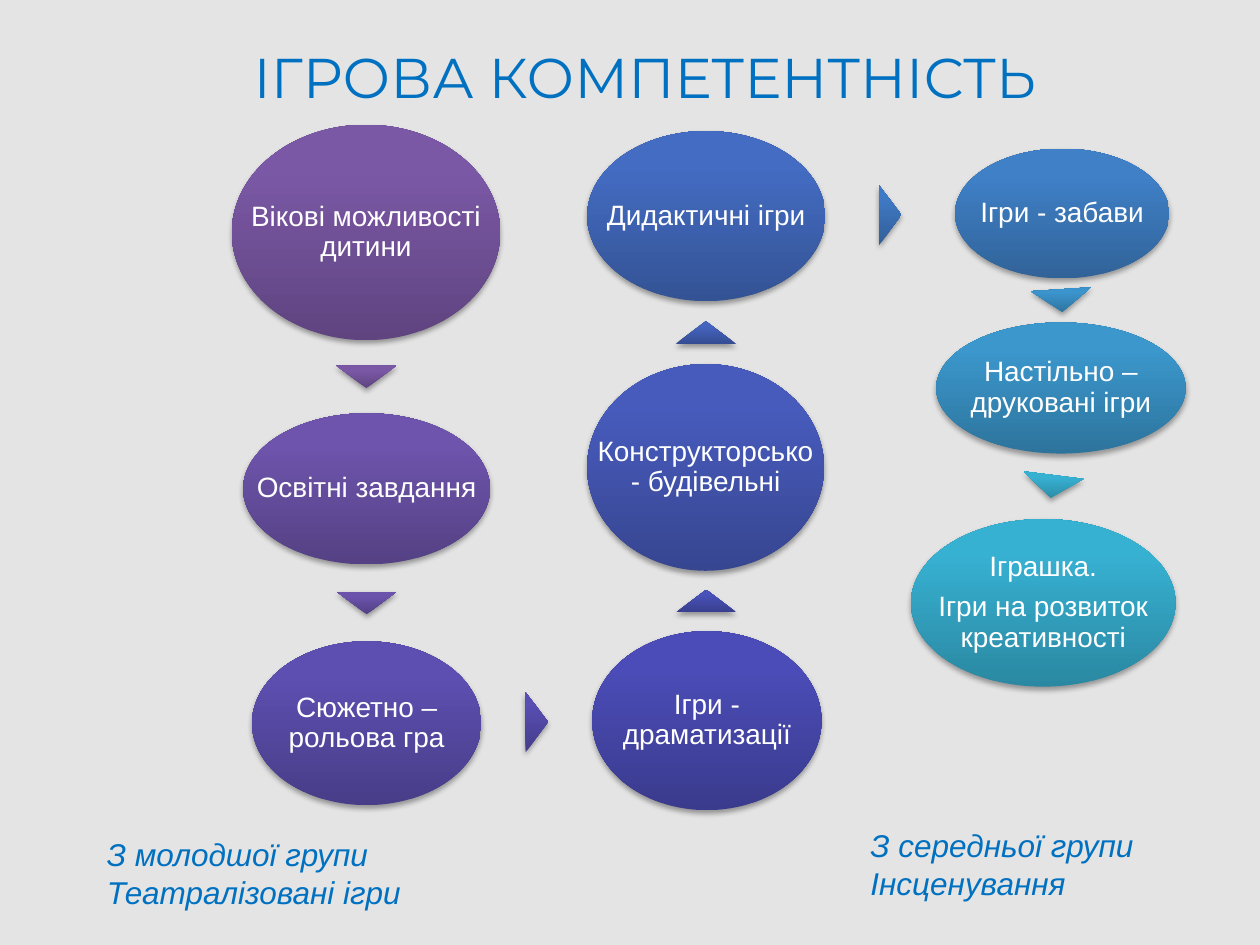
from dataclasses import dataclass
from typing import Any

from lxml import etree
from pptx import Presentation
from pptx.dml.color import RGBColor
from pptx.enum.shapes import MSO_SHAPE
from pptx.enum.text import MSO_ANCHOR, PP_ALIGN
from pptx.oxml.ns import qn
from pptx.util import Inches, Pt

ELLIPSE = MSO_SHAPE.OVAL
TRIANGLE = MSO_SHAPE.ISOSCELES_TRIANGLE
LEFT, CENTER = PP_ALIGN.LEFT, PP_ALIGN.CENTER
TOP, MIDDLE = MSO_ANCHOR.TOP, MSO_ANCHOR.MIDDLE

CELL = 0.1  # inches; the page is 100 columns by 75 rows
ARROW_WIDTH, ARROW_HEIGHT = 4.8, 1.8

# Text, ellipse (left, top, width, height) in cells, ellipse colour
STEPS = [
    ("Вікові можливості дитини", (18.4, 9.9, 21.3, 17.1), "7B58A6"),
    ("Освітні завдання", (19.3, 32.8, 19.6, 12), "6E54AC"),
    ("Сюжетно – рольова гра", (20, 50.9, 18.2, 13), "5D4FB1"),
    ("Ігри - драматизації", (47, 50.1, 18.2, 14.2), "4B4CB7"),
    ("Конструкторсько - будівельні", (46.6, 28.9, 18.8, 16.4), "475BBC"),
    ("Дидактичні ігри", (46.6, 10.4, 18.9, 13.5), "436CC2"),
    ("Ігри - забави", (75.8, 11.8, 17, 10.3), "3F80C7"),
    ("Настільно – друковані ігри", (74.3, 25.6, 19.8, 10.4), "3B97CC"),
    ("Іграшка.\nІгри на розвиток креативності", (72.3, 41.2, 21, 13.3), "37B1D2"),
]
# Turn in degrees and colour of the arrow after each step but the last
ARROWS = [
    (180, "7B58A6"), (180, "6B53AC"), (89.6, "584EB3"), (0, "4952B9"),
    (0, "4564BF"), (89.5, "407AC6"), (176.3, "3B94CC"), (187.2, "37B1D2"),
]


def color(hex_text):
    return RGBColor.from_string(hex_text)


def darker(hex_text, share=0.77):
    parts = (int(hex_text[i:i + 2], 16) for i in (0, 2, 4))
    return "".join(f"{round(part * share):02X}" for part in parts)


def gap_center(first, second):
    """Middle of the gap between two boxes, or of their centres where they overlap."""
    def middle(axis):
        a, b = sorted(((box[axis], box[axis] + box[axis + 2])
                       for box in (first, second)))
        if a[1] < b[0]:
            return (a[1] + b[0]) / 2
        return (sum(a) + sum(b)) / 4

    return middle(0), middle(1)


@dataclass
class Board:
    page: Any
    font: str = "Arial"
    accent: str = "0070C0"
    light: str = "FFFFFF"

    def place(self, box):
        return [Inches(cells * CELL) for cells in box]

    def background(self, fill):
        self.page.background.fill.solid()
        self.page.background.fill.fore_color.rgb = color(fill)

    def text(self, words, box, size, ink, font=None, italic=False,
             align=LEFT, anchor=TOP):
        frame = self.page.shapes.add_textbox(*self.place(box)).text_frame
        frame.word_wrap = True
        frame.vertical_anchor = anchor
        frame.text = words
        for para in frame.paragraphs:
            para.alignment = align
            for span in para.runs:
                span.font.name = font or self.font
                span.font.size = Pt(size)
                span.font.italic = italic
                span.font.color.rgb = color(ink)
        return frame

    def shaded(self, kind, box, fill, turn=0):
        """Shape with a vertical gradient and a soft shadow below."""
        shape = self.page.shapes.add_shape(kind, *self.place(box))
        shape.rotation = turn
        shape.fill.gradient()
        shape.fill.gradient_angle = 90
        bottom, top = shape.fill.gradient_stops
        bottom.position, bottom.color.rgb = 0, color(darker(fill))
        top.position, top.color.rgb = 0.8, color(fill)
        shape.line.fill.background()
        shape.shadow.inherit = False
        properties = shape._element.spPr
        properties.find(qn("a:gradFill")).set("rotWithShape", "0")
        shadow = etree.SubElement(
            properties.find(qn("a:effectLst")), qn("a:outerShdw"),
            blurRad=str(Pt(3.1)), dist=str(Pt(1.8)), dir="5400000", rotWithShape="0")
        tint = etree.SubElement(shadow, qn("a:srgbClr"), val="000000")
        etree.SubElement(tint, qn("a:alpha"), val="35000")

    def step(self, words, box, fill):
        self.shaded(ELLIPSE, box, fill)
        frame = self.text(words, box, 16, self.light, align=CENTER, anchor=MIDDLE)
        frame.margin_left = frame.margin_right = Inches(0.02)
        frame.margin_top = frame.margin_bottom = Inches(0.02)
        for para in frame.paragraphs:
            para.line_spacing = 0.9
            para.space_after = Pt(5.6)

    def arrow(self, first, second, turn, fill):
        x, y = gap_center(first, second)
        box = (x - ARROW_WIDTH / 2, y - ARROW_HEIGHT / 2, ARROW_WIDTH, ARROW_HEIGHT)
        self.shaded(TRIANGLE, box, fill, turn)


def main():
    deck = Presentation()
    deck.slide_width, deck.slide_height = Inches(10), Inches(7.5)
    board = Board(deck.slides.add_slide(deck.slide_layouts[6]))
    board.background("E4E4E4")
    board.text("ІГРОВА КОМПЕТЕНТНІСТЬ", (12.2, 2.9, 78, 6.4), 32, board.accent,
               font="Montserrat", align=CENTER)
    for step in STEPS:
        board.step(*step)
    for before, after, (turn, fill) in zip(STEPS, STEPS[1:], ARROWS):
        board.arrow(before[1], after[1], turn, fill)
    for words, left, top in (
        ("З молодшої групи Театралізовані ігри", 7.5, 65.8),
        ("З середньої групи Інсценування", 68.1, 65.1),
    ):
        board.text(words, (left, top, 26, 7.1), 18, board.accent, italic=True)
    deck.save("out.pptx")


if __name__ == "__main__":
    main()
